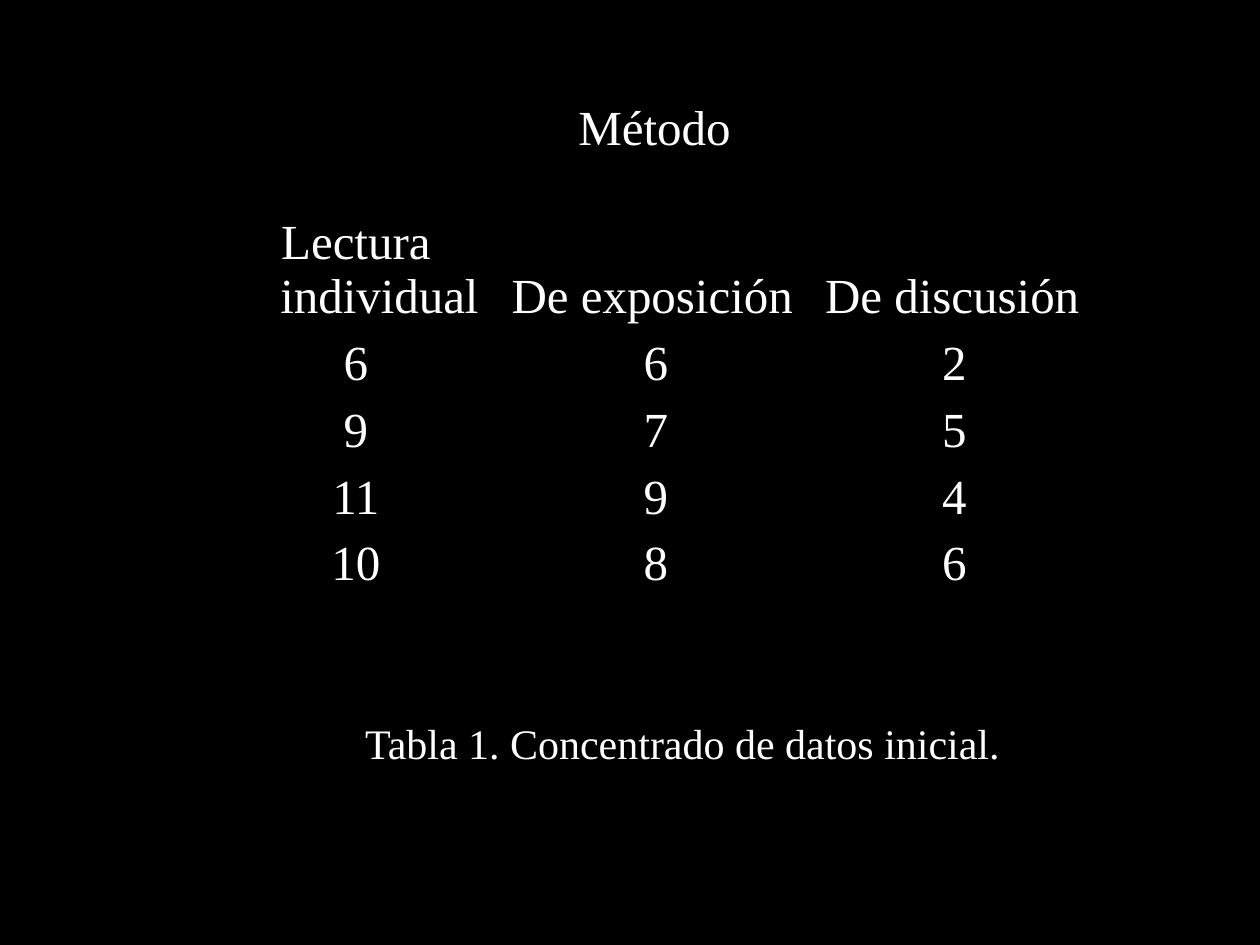
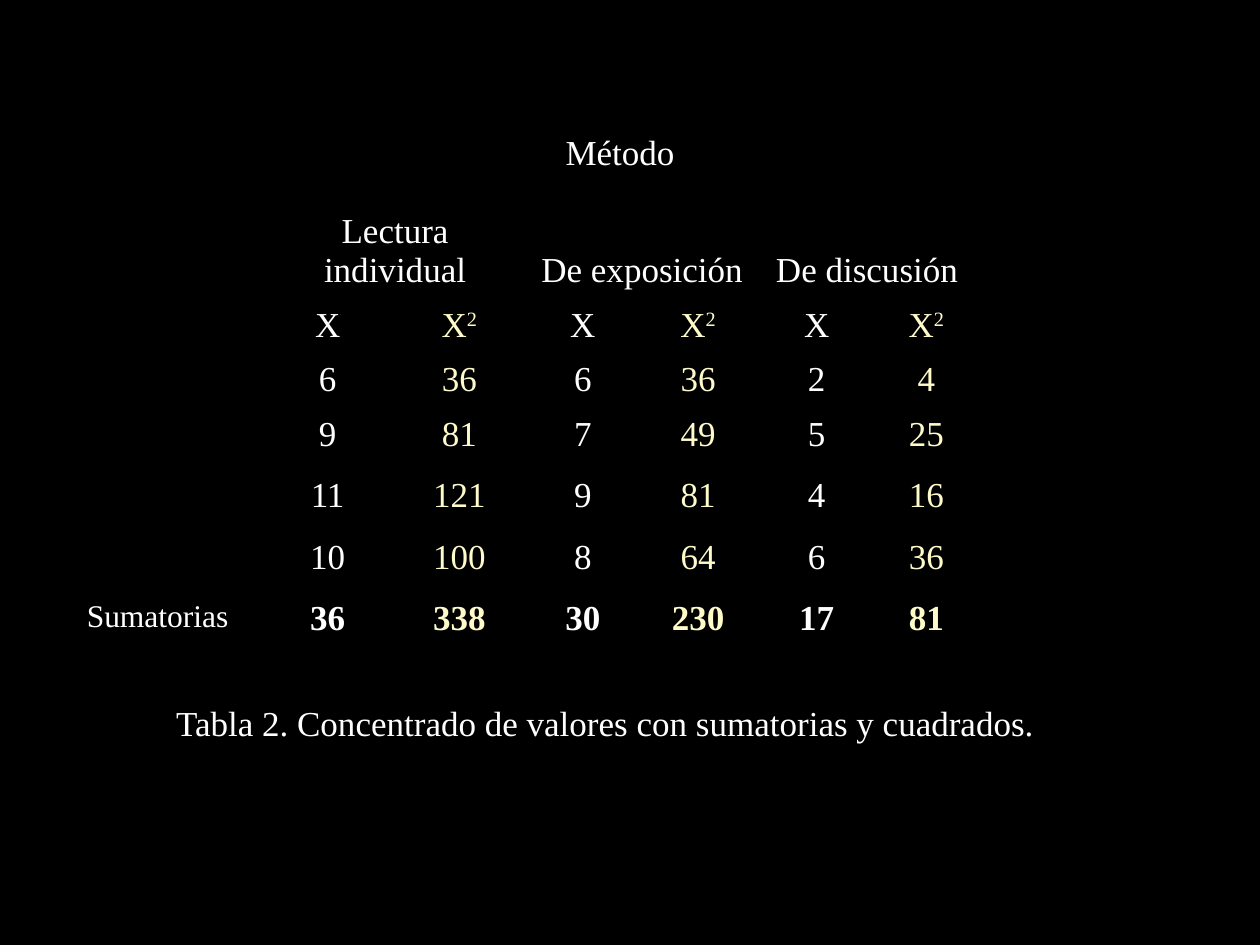
from lxml import etree
from pptx import Presentation
from pptx.dml.color import RGBColor
from pptx.enum.text import MSO_ANCHOR, MSO_AUTO_SIZE, PP_ALIGN
from pptx.oxml.ns import qn
from pptx.util import Cm, Pt

BLACK = RGBColor(0x00, 0x00, 0x00)
WHITE = RGBColor(0xFF, 0xFF, 0xFF)
CREAM = RGBColor(0xFE, 0xFA, 0xC9)
FONT = "Times New Roman"
CENTER, LEFT = PP_ALIGN.CENTER, PP_ALIGN.LEFT
BOTTOM = MSO_ANCHOR.BOTTOM
GROW = MSO_AUTO_SIZE.SHAPE_TO_FIT_TEXT
HANG = Cm(0.95)

# Scores for each method, one row per group
SCORES = [(6, 6, 2), (9, 7, 5), (11, 9, 4), (10, 8, 6)]


def style(para, size, color=WHITE, bold=False):
    for run in para.runs:
        font = run.font
        font.name, font.size, font.bold = FONT, Pt(size), bold
        font.color.rgb = color


def grid(slide, left, top, cols, rows, data, size, spans):
    frame = slide.shapes.add_table(len(rows), len(cols), Cm(left), Cm(top),
                                   Cm(sum(cols)), Cm(sum(rows)))
    table = frame.table
    table.first_row = table.horz_banding = False
    for col, width in zip(table.columns, cols):
        col.width = Cm(width)
    for row, height in zip(table.rows, rows):
        row.height = Cm(height)
    for y, line in enumerate(data):
        for x, text in enumerate(line):
            cell = table.cell(y, x)
            cell.vertical_anchor = BOTTOM
            cell.text_frame.text = str(text)
            for para in cell.text_frame.paragraphs:
                para.alignment = CENTER
                props = para._p.get_or_add_pPr()
                props.set("marL", str(HANG))
                props.set("indent", str(-HANG))
                style(para, size)
            # Black edges on all four sides
            edges = cell._tc.get_or_add_tcPr()
            for side in "LRTB":
                edge = etree.SubElement(edges, qn("a:ln" + side), w=str(Pt(1)))
                fill = etree.SubElement(edge, qn("a:solidFill"))
                etree.SubElement(fill, qn("a:srgbClr"), val=str(BLACK))
            cell.fill.background()
    for y, first, last in spans:
        table.cell(y, first).merge(table.cell(y, last))
    return table


deck = Presentation()
deck.slide_width, deck.slide_height = Cm(25.4), Cm(19.05)
slides = []
for _ in range(2):
    slide = deck.slides.add_slide(deck.slide_layouts[6])
    slide.background.fill.solid()
    slide.background.fill.fore_color.rgb = BLACK
    slides.append(slide)
start, sums = slides

# Table 1: the scores
data = [("Método", "", ""),
        ("Lectura individual", "De exposición", "De discusión")] + SCORES
table = grid(start, 4.29, 1.93, [5.77, 6.32, 5.72], [1.32, 3.38] + [1.32] * 4,
             data, 28, [(0, 0, 2)])
for x in (1, 2):
    table.cell(1, x).text_frame.paragraphs[0].alignment = LEFT

# Table 2: scores, squares and their sums
pairs = [[n for score in line for n in (score, score ** 2)] for line in SCORES]
total = [sum(col) for col in zip(*pairs)]
data = [["Método"] + [""] * 5,
        ["Lectura\nindividual", "", "De exposición", "", "De discusión", ""],
        ["X"] * 6] + pairs + [total]
table = grid(sums, 5.31, 2.51, [2.59, 2.72, 2.26, 2.39, 2.39, 2.03],
             [0.89, 2.36] + [0.89] * 3 + [1.24] * 3, data, 20,
             [(0, 0, 5), (1, 0, 1), (1, 2, 3), (1, 4, 5)])
end = len(data) - 1
for y in range(2, end + 1):
    for x in range(6):
        para = table.cell(y, x).text_frame.paragraphs[0]
        square = x % 2 == 1
        if y == 2 and square:
            power = para.add_run()
            power.text = "2"
            power._r.get_or_add_rPr().set("baseline", "30000")
        style(para, 20, CREAM if square else WHITE, y == end)

# Thicker rule above the sums
for x in range(6):
    for y, side in ((end - 1, "B"), (end, "T")):
        edge = table.cell(y, x)._tc.tcPr.find(qn("a:ln" + side))
        edge.set("w", str(Pt(2)))

# Captions and row label
notes = [
    (start, "Tabla 1. Concentrado de datos inicial.", 24, 7.11, 14.33, 14, 1.27),
    (sums, "Tabla 2. Concentrado de valores con sumatorias y cuadrados.",
     20, 3.3, 14.02, 18.8, 1.09),
    (sums, "Sumatorias", 18, 1.5, 11.89, 3.42, 1.02),
]
for slide, text, size, *spot in notes:
    box = slide.shapes.add_textbox(*[Cm(n) for n in spot]).text_frame
    box.word_wrap = True
    box.auto_size = GROW
    box.text = text
    style(box.paragraphs[0], size)

deck.save("out.pptx")
